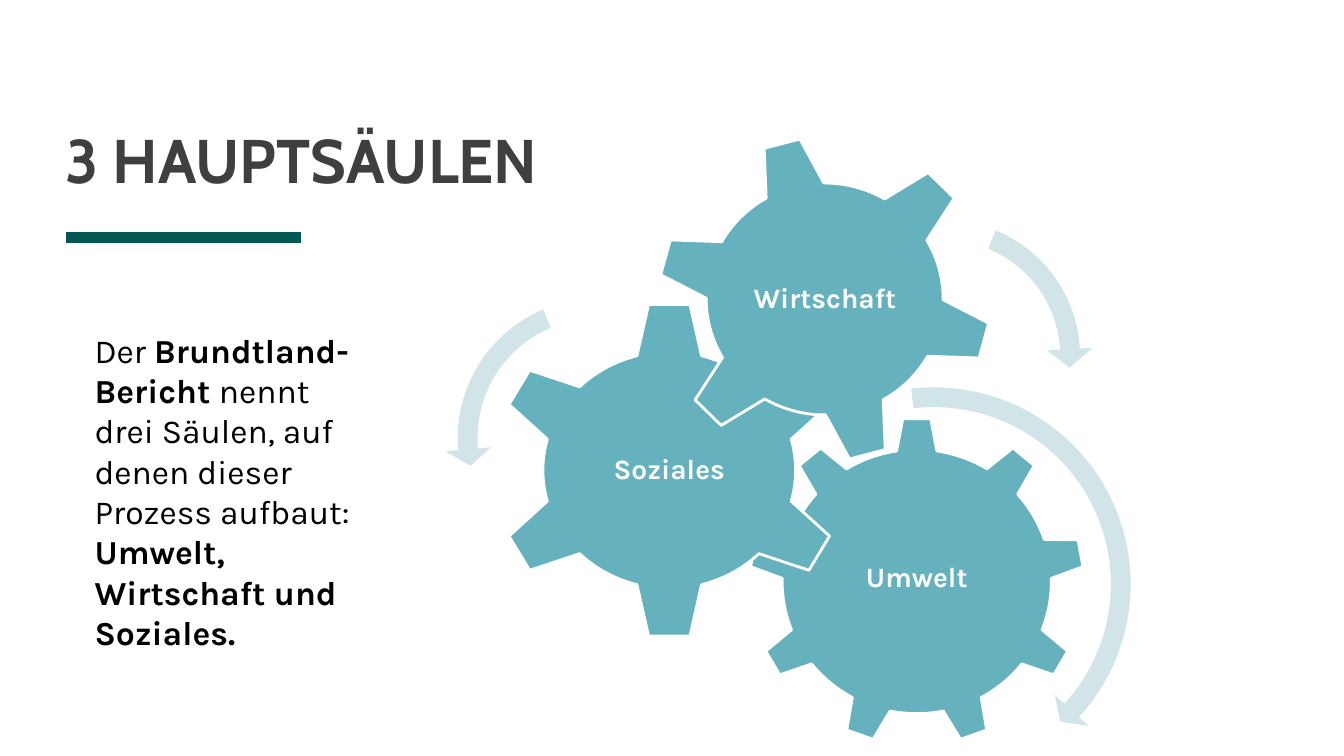
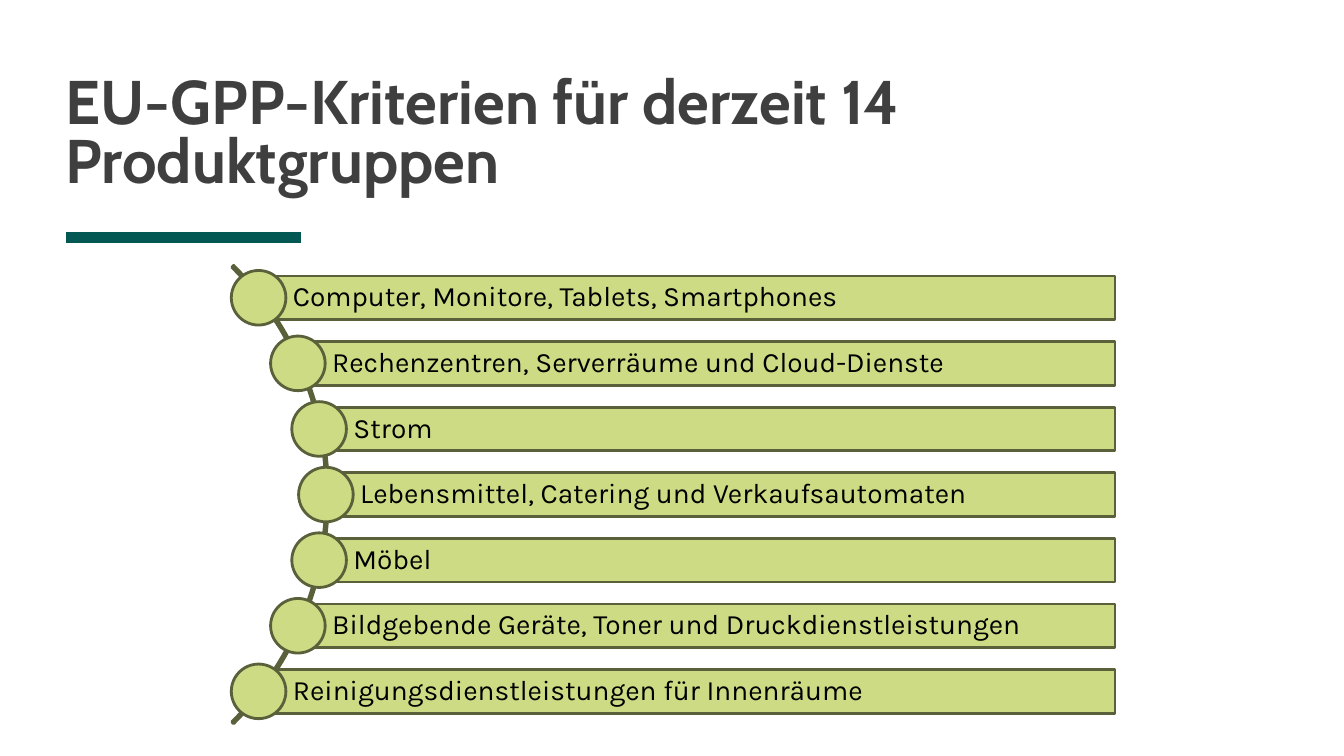
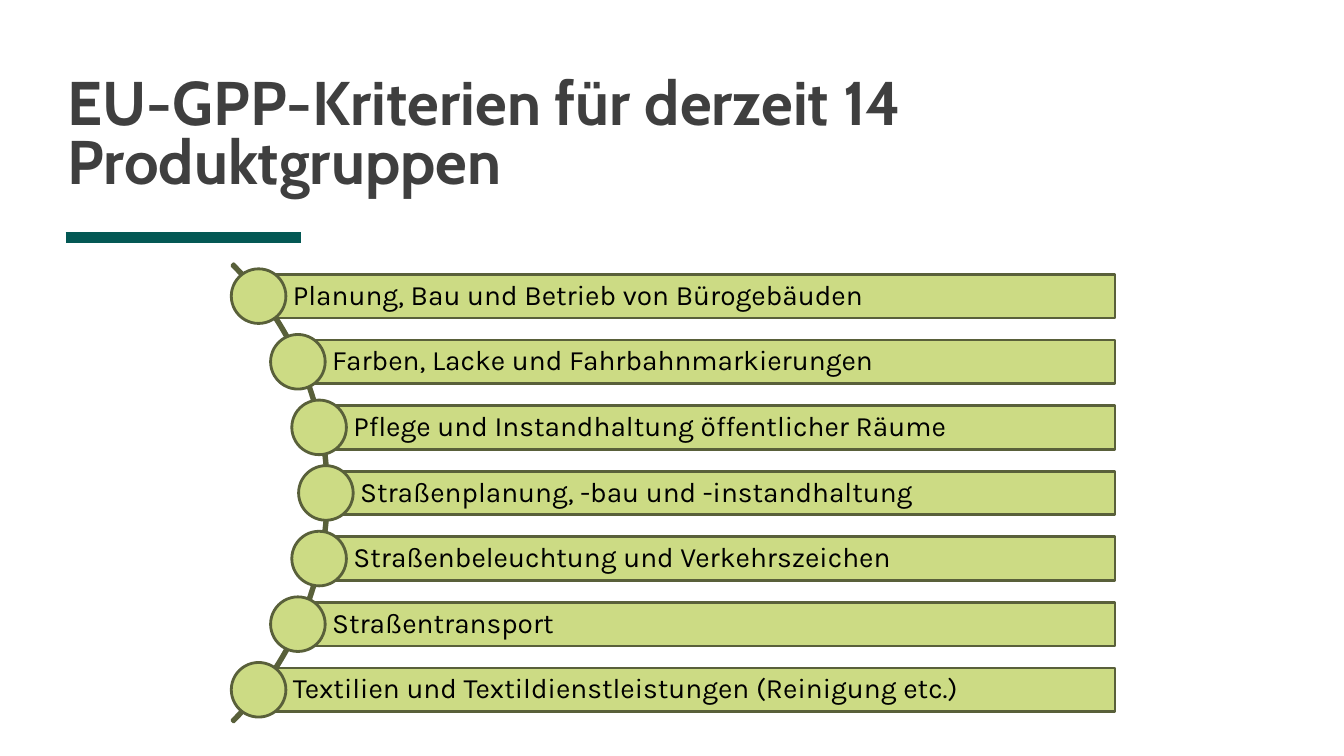
from dataclasses import dataclass
from math import ceil, cos, radians, sin, sqrt, tan

from lxml.etree import SubElement
from pptx import Presentation
from pptx.dml.color import RGBColor as Rgb
from pptx.enum.shapes import MSO_CONNECTOR as Connector, MSO_SHAPE as Preset
from pptx.enum.text import MSO_ANCHOR as Anchor, MSO_AUTO_SIZE as AutoSize, PP_ALIGN as Align
from pptx.oxml.ns import qn
from pptx.util import Emu, Inches, Pt

COLUMNS, ROWS = 160, 90
CELL = Inches(7.5) / ROWS
TITLE_ONLY = 5

Point = tuple[float, float]
Box = tuple[float, float, float, float]
Segment = tuple[Point, ...]


@dataclass(frozen=True)
class Theme:
    """Colours, fonts and type sizes of the deck."""

    title_font: str = "Cabin"
    body_font: str = "Karla"
    title_size: int = 44
    body_size: int = 24
    label_size: int = 20
    outline: int = 2
    accent_width: int = 8
    title: str = "3F3F3F"
    accent: str = "035854"
    text: str = "000000"
    white: str = "FFFFFF"
    gear: str = "65B1BE"
    arrow: str = "D1E5E9"
    bar: str = "CCDB84"
    bar_line: str = "59603A"


@dataclass(frozen=True)
class Gear:
    """A labelled gear; angles are in degrees, clockwise from the right."""

    label: str
    label_box: Box
    center: Point
    body: Point
    tips: Point
    teeth: int
    first_tooth: float
    root_half: float
    tip_half: float


@dataclass(frozen=True)
class TurnArrow:
    """A curved arrow around a centre."""

    center: Point
    radius: float
    start: float
    neck: float
    tip: float


@dataclass(frozen=True)
class ProductList:
    """One slide of product groups strung along an arc."""

    title_corner: Point
    middle: float
    groups: tuple[str, ...]


THEME = Theme()
TITLE_CORNER = (7.8, 2.64)
TITLE_SIZE = (144, 20.64)
ACCENT = (7.8, 35.8, 28.26)

GEARS = (
    Gear("Umwelt", (97.2, 58.8, 23.88, 20.16), (109.14, 69.24),
         (16.02, 15.72), (19.86, 19.46), 9, -90, 8.6, 4.8),
    Gear("Soziales", (69, 46.08, 21.36, 19.92), (79.68, 55.98),
         (15.04, 14.09), (20.76, 19.88), 6, -90, 14.8, 6.8),
    Gear("Wirtschaft", (87, 24.6, 22.44, 22.08), (98.18, 35.6),
         (14.1, 13.8), (19.74, 19.26), 6, -105, 14.6, 6.4),
)
ARROWS = (
    TurnArrow((111.18, 69.54), 22.25, -96.6, 42.5, 47.4),
    TurnArrow((71.1, 52.14), 15.42, 247.2, 175, 167.6),
    TurnArrow((112.4, 42.4), 15, -67.7, -3.2, 5.2),
)
ARROW_BAND = 2.35
ARROW_OVERHANG = 1.55

BERICHT = (
    ("Der ", False),
    ("Brundtland-Bericht ", True),
    ("nennt drei Säulen, auf denen dieser Prozess aufbaut: ", False),
    ("Umwelt, Wirtschaft und Soziales.", True),
)
BERICHT_BOX = (10.08, 38.64, 32.88, 39.96)

LIST_TITLE = "EU-GPP-Kriterien für derzeit 14 Produktgruppen"
LISTS = (
    ProductList(TITLE_CORNER, 58.88, (
        "Computer, Monitore, Tablets, Smartphones",
        "Rechenzentren, Serverräume und Cloud-Dienste",
        "Strom",
        "Lebensmittel, Catering und Verkaufsautomaten",
        "Möbel",
        "Bildgebende Geräte, Toner und Druckdienstleistungen",
        "Reinigungsdienstleistungen für Innenräume",
    )),
    ProductList((8.04, 2.76), 58.69, (
        "Planung, Bau und Betrieb von Bürogebäuden",
        "Farben, Lacke und Fahrbahnmarkierungen",
        "Pflege und Instandhaltung öffentlicher Räume",
        "Straßenplanung, -bau und -instandhaltung",
        "Straßenbeleuchtung und Verkehrszeichen",
        "Straßentransport",
        "Textilien und Textildienstleistungen (Reinigung etc.)",
    )),
)
ARC_X, ARC_RADIUS, NODE_ORBIT = 0.54, 38.58, 38.26
BAR_PITCH, BAR_HEIGHT, BAR_RIGHT, NODE_SIZE = 7.81, 5.2, 132.75, 6.5


def cells(count: float) -> Emu:
    """Turn grid cells into a length."""
    return Emu(round(count * CELL))


def box(left: float, top: float, width: float, height: float) -> tuple[Emu, ...]:
    """Turn a box in grid cells into lengths."""
    return tuple(cells(value) for value in (left, top, width, height))


def polar(center: Point, radii: Point, angle: float) -> Point:
    """Return the point of an ellipse at an angle."""
    turn = radians(angle)
    return center[0] + radii[0] * cos(turn), center[1] + radii[1] * sin(turn)


def sweep(center: Point, radii: Point, start: float, end: float) -> list[Segment]:
    """Describe an elliptical arc by cubic curves of at most 75 degrees."""
    count = ceil(abs(end - start) / 75)
    step = (end - start) / count
    reach = 4 / 3 * tan(radians(step / 4))
    curves = []
    for index in range(count):
        begin, finish = start + index * step, start + (index + 1) * step
        handles = []
        for angle, sign in ((begin, 1), (finish, -1)):
            x, y = polar(center, radii, angle)
            handles.append((x - sign * reach * radii[0] * sin(radians(angle)),
                            y + sign * reach * radii[1] * cos(radians(angle))))
        curves.append((*handles, polar(center, radii, finish)))
    return curves


def style_font(font, name: str, size: int, color: str, bold: bool = False) -> None:
    """Apply one type style."""
    font.name, font.size, font.bold = name, Pt(size), bold
    font.color.rgb = Rgb.from_string(color)


def style_shape(shape, fill: str, line: str | None = None) -> None:
    """Give a shape its flat fill and its outline."""
    shape.shadow.inherit = False
    shape.fill.solid()
    shape.fill.fore_color.rgb = Rgb.from_string(fill)
    if line is None:
        shape.line.fill.background()
    else:
        shape.line.color.rgb = Rgb.from_string(line)
        shape.line.width = Pt(THEME.outline)


def set_insets(frame, left: float, top: float, right: float, bottom: float) -> None:
    """Set the four insets of a text frame in inches."""
    frame.margin_left, frame.margin_top = Inches(left), Inches(top)
    frame.margin_right, frame.margin_bottom = Inches(right), Inches(bottom)


def write_label(shape, text: str, align: Align, color: str, bold: bool) -> None:
    """Write a one-paragraph label into a shape."""
    frame = shape.text_frame
    frame.text = text
    frame.word_wrap = True
    frame.vertical_anchor = Anchor.MIDDLE
    paragraph = frame.paragraphs[0]
    paragraph.alignment, paragraph.line_spacing = align, 0.9
    style_font(paragraph.runs[0].font, THEME.body_font, THEME.label_size, color, bold)


def add_outline(slide, start: Point, segments: list[Segment]):
    """Draw a closed outline of lines (one point) and cubic curves (three points)."""
    builder = slide.shapes.build_freeform(cells(start[0]), cells(start[1]))
    builder.add_line_segments(
        [(cells(x), cells(y)) for segment in segments for x, y in segment], close=True)
    shape = builder.convert_to_shape()
    steps = iter(list(shape.element.iter(qn("a:lnTo"))))
    for segment in segments:
        step = next(steps)
        if len(segment) == 3:
            curve = SubElement(step.getparent(), qn("a:cubicBezTo"))
            step.addprevious(curve)
            for part in (step, next(steps), next(steps)):
                curve.append(part[0])
                part.getparent().remove(part)
    return shape


def add_gear(slide, gear: Gear) -> None:
    """Draw a gear with its label."""
    pitch = 360 / gear.teeth
    segments = []
    for tooth in range(gear.teeth):
        angle = gear.first_tooth + tooth * pitch
        root, next_root = angle + gear.root_half, angle + pitch - gear.root_half
        segments += [(polar(gear.center, gear.tips, angle - gear.tip_half),),
                     (polar(gear.center, gear.tips, angle + gear.tip_half),),
                     (polar(gear.center, gear.body, root),)]
        segments += sweep(gear.center, gear.body, root, next_root)
    style_shape(add_outline(slide, segments[0][0], segments[1:]), THEME.gear, THEME.white)
    label = slide.shapes.add_textbox(*box(*gear.label_box))
    write_label(label, gear.label, Align.CENTER, THEME.white, True)
    set_insets(label.text_frame, 0.03, 0.03, 0.03, 0.03)


def add_turn_arrow(slide, arrow: TurnArrow) -> None:
    """Draw a curved arrow."""
    outer, inner = arrow.radius + ARROW_BAND / 2, arrow.radius - ARROW_BAND / 2
    head = ((outer + ARROW_OVERHANG, arrow.neck), (arrow.radius, arrow.tip),
            (inner - ARROW_OVERHANG, arrow.neck), (inner, arrow.neck))
    segments = sweep(arrow.center, (outer, outer), arrow.start, arrow.neck)
    segments += [(polar(arrow.center, (radius, radius), angle),) for radius, angle in head]
    segments += sweep(arrow.center, (inner, inner), arrow.neck, arrow.start)
    start = polar(arrow.center, (outer, outer), arrow.start)
    style_shape(add_outline(slide, start, segments), THEME.arrow)


def add_bericht(slide) -> None:
    """Write the paragraph about the report."""
    frame = slide.shapes.add_textbox(*box(*BERICHT_BOX)).text_frame
    frame.word_wrap = True
    frame.auto_size = AutoSize.SHAPE_TO_FIT_TEXT
    for text, bold in BERICHT:
        run = frame.paragraphs[0].add_run()
        run.text = text
        style_font(run.font, THEME.body_font, THEME.body_size, THEME.text, bold)


def add_product_list(slide, products: ProductList) -> None:
    """Draw the arc with its bars and nodes."""
    arc = slide.shapes.add_shape(Preset.BLOCK_ARC, *box(
        ARC_X - ARC_RADIUS, products.middle - ARC_RADIUS, 2 * ARC_RADIUS, 2 * ARC_RADIUS))
    for index, value in enumerate((189, 27, 0.004)):
        arc.adjustments[index] = value
    style_shape(arc, THEME.bar, THEME.bar_line)
    for index, group in enumerate(products.groups):
        offset = (index - (len(products.groups) - 1) / 2) * BAR_PITCH
        x, y = ARC_X + sqrt(NODE_ORBIT ** 2 - offset ** 2), products.middle + offset
        bar = slide.shapes.add_shape(
            Preset.RECTANGLE, *box(x, y - BAR_HEIGHT / 2, BAR_RIGHT - x, BAR_HEIGHT))
        style_shape(bar, THEME.bar, THEME.bar_line)
        write_label(bar, group, Align.LEFT, THEME.text, False)
        set_insets(bar.text_frame, 0.34, 0.06, 0.06, 0.06)
        node = slide.shapes.add_shape(
            Preset.OVAL, *box(x - NODE_SIZE / 2, y - NODE_SIZE / 2, NODE_SIZE, NODE_SIZE))
        style_shape(node, THEME.bar, THEME.bar_line)


def add_titled_slide(deck, title: str, corner: Point):
    """Add a slide with its formatted title."""
    slide = deck.slides.add_slide(deck.slide_layouts[TITLE_ONLY])
    heading = slide.shapes.title
    heading.left, heading.top, heading.width, heading.height = box(*corner, *TITLE_SIZE)
    frame = heading.text_frame
    frame.text = title
    frame.word_wrap, frame.auto_size = True, AutoSize.NONE
    frame.vertical_anchor = Anchor.BOTTOM
    set_insets(frame, 0, 0, 0, 0)
    paragraph = frame.paragraphs[0]
    paragraph.alignment, paragraph.line_spacing = Align.LEFT, 0.8
    style_font(paragraph.runs[0].font, THEME.title_font, THEME.title_size, THEME.title, True)
    return slide


def move_accent_to_layout(slide) -> None:
    """Draw the accent line once, on the layout that all slides share."""
    left, right, y = (cells(value) for value in ACCENT)
    accent = slide.shapes.add_connector(Connector.STRAIGHT, left, y, right, y)
    accent.line.color.rgb = Rgb.from_string(THEME.accent)
    accent.line.width = Pt(THEME.accent_width)
    SubElement(accent.element.spPr, qn("a:effectLst"))
    slide.slide_layout.shapes.element.append(accent.element)


def main() -> None:
    """Build and save the deck."""
    deck = Presentation()
    deck.slide_width, deck.slide_height = cells(COLUMNS), cells(ROWS)
    pillars = add_titled_slide(deck, "3 HAUPTSÄULEN", TITLE_CORNER)
    move_accent_to_layout(pillars)
    for gear in GEARS:
        add_gear(pillars, gear)
    for arrow in ARROWS:
        add_turn_arrow(pillars, arrow)
    add_bericht(pillars)
    for products in LISTS:
        add_product_list(add_titled_slide(deck, LIST_TITLE, products.title_corner), products)
    deck.save("out.pptx")


if __name__ == "__main__":
    main()
